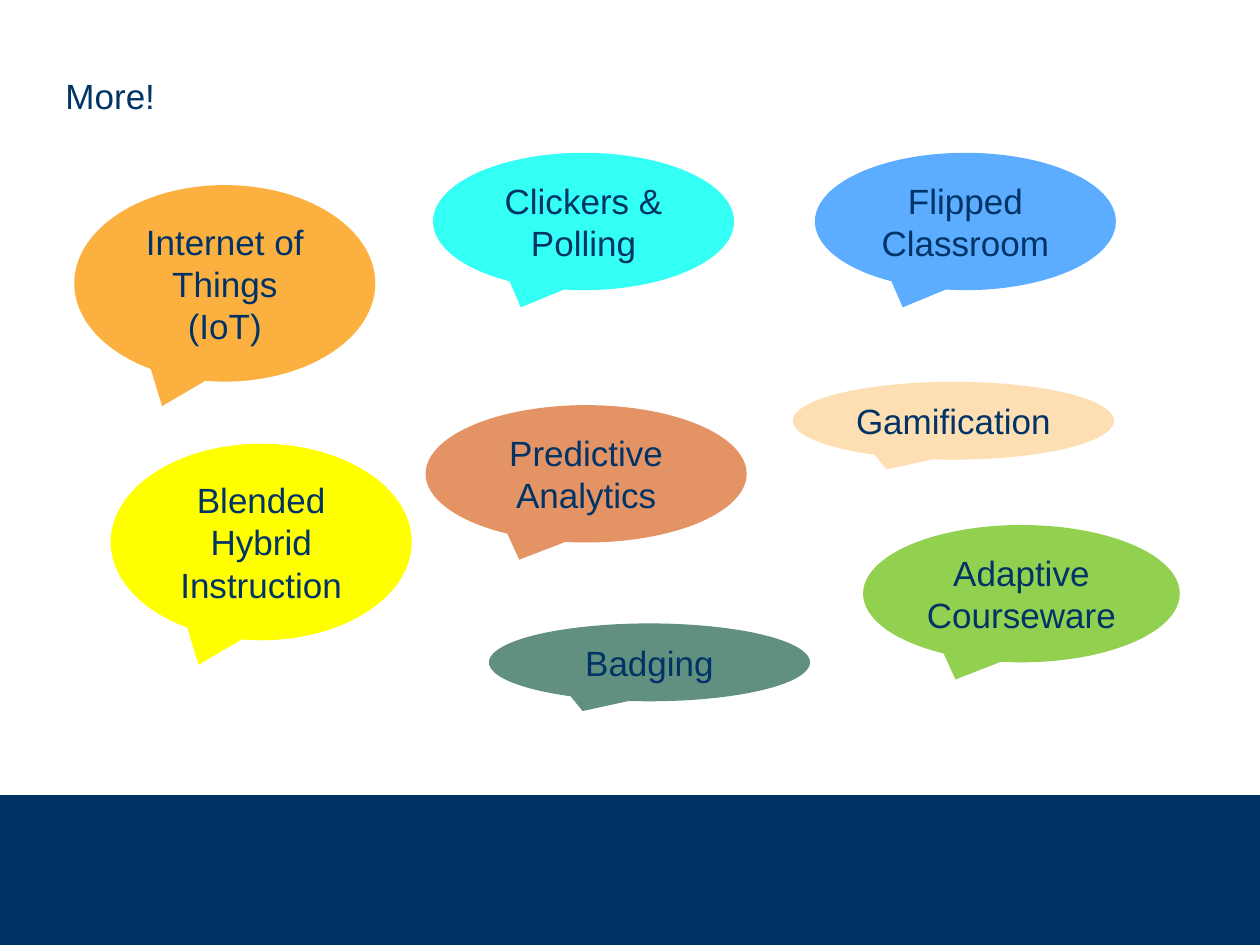
"""Build the "More!" slide: learning trends in speech bubbles above a navy footer band."""
from dataclasses import dataclass

from pptx import Presentation
from pptx.dml.color import RGBColor
from pptx.enum.shapes import MSO_SHAPE as Preset
from pptx.enum.text import MSO_ANCHOR as Anchor, PP_ALIGN as Align
from pptx.util import Pt


@dataclass(frozen=True)
class Theme:
    font: str = "Arial"
    size: int = 20
    ink: str = "003366"
    band: str = "003264"
    orange: str = "FBB040"
    yellow: str = "FFFF00"
    green: str = "92D050"
    blue: str = "5CADFF"
    cyan: str = "34FFF5"
    cream: str = "FDDFB3"
    copper: str = "E49365"
    sage: str = "619080"


def add_filled(page, preset, left, top, width, height, color):
    shape = page.shapes.add_shape(preset, Pt(left), Pt(top), Pt(width), Pt(height))
    shape.shadow.inherit = False
    shape.fill.solid()
    shape.fill.fore_color.rgb = RGBColor.from_string(color)
    shape.line.fill.background()
    return shape


def write(box, text, align, wrap):
    frame = box.text_frame
    frame.word_wrap = wrap
    frame.vertical_anchor = Anchor.MIDDLE
    para = frame.paragraphs[0]
    para.alignment = align
    span = para.add_run()
    span.text = text
    span.font.name = theme.font
    span.font.size = Pt(theme.size)
    span.font.color.rgb = RGBColor.from_string(theme.ink)


theme = Theme()
deck = Presentation()
deck.slide_width, deck.slide_height = Pt(720), Pt(540)
page = deck.slides.add_slide(deck.slide_layouts[5])

add_filled(page, Preset.RECTANGLE, 0, 454.3, 720, 85.7, theme.band)

one_line, two_lines, three_lines = 44.5, 78.5, 112.3
bubbles = [
    ("Internet of Things (IoT)", 42.5, 105.8, 172, three_lines, theme.orange),
    ("Blended Hybrid Instruction", 63.3, 253.6, 172, three_lines, theme.yellow),
    ("Adaptive Courseware", 493.2, 300, 181, two_lines, theme.green),
    ("Flipped Classroom", 465.7, 87.3, 172, two_lines, theme.blue),
    ("Clickers & Polling", 247.5, 87.3, 172, two_lines, theme.cyan),
    ("Gamification", 453.1, 218.2, 183.5, one_line, theme.cream),
    ("Predictive Analytics", 243.2, 231.5, 183.5, two_lines, theme.copper),
    ("Badging", 279.4, 356.3, 183.5, one_line, theme.sage),
]
for text, left, top, width, height, color in bubbles:
    bubble = add_filled(page, Preset.OVAL_CALLOUT, left, top, width, height, color)
    write(bubble, text, Align.CENTER, True)

title = page.shapes.title
title.left, title.top, title.width, title.height = Pt(30.2), Pt(39), Pt(66.2), Pt(31.5)
write(title, "More!", Align.LEFT, False)

deck.save("out.pptx")
